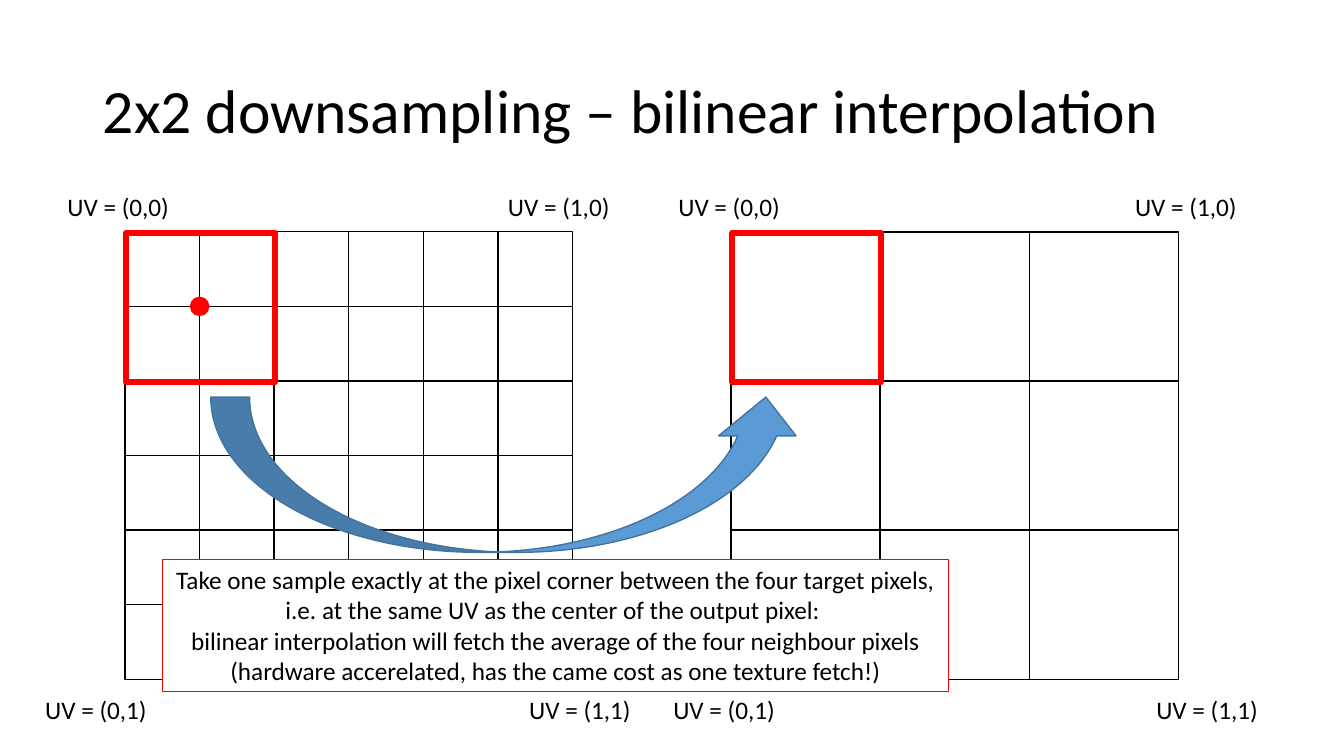
"""Build the slide on 2x2 downsampling by bilinear interpolation."""
from itertools import product

from pptx import Presentation
from pptx.dml.color import RGBColor
from pptx.enum.shapes import MSO_SHAPE as SHAPE
from pptx.enum.text import MSO_ANCHOR as ANCHOR, MSO_AUTO_SIZE as AUTO, PP_ALIGN as ALIGN
from pptx.oxml.ns import qn
from pptx.util import Inches, Pt

COLORS = {"black": "000000", "white": "FFFFFF", "red": "FF0000",
          "blue": "5B9BD5", "navy": "43739E"}
FONT = "Calibri"
CELL = 0.74
TOP = 2.3
INPUT_X, OUTPUT_X = 1.24, 7.25
LABEL_ROWS = (1.85, 6.84)
LABEL_COLUMNS = (((0.57, 4.94), (0.35, 5.15)),
                 ((6.63, 11.16), (6.58, 11.37)))
NOTE = ("Take one sample exactly at the pixel corner between the four target pixels, "
        "i.e. at the same UV as the center of the output pixel: ",
        "bilinear interpolation will fetch the average of the four neighbour pixels",
        "(hardware accerelated, has the came cost as one texture fetch!)")


def rgb(name):
    """Return the named colour."""
    return RGBColor.from_string(COLORS[name])


def box(*lengths):
    """Turn lengths in inches into slide units."""
    return [Inches(v) for v in lengths]


def write(s, *lines, size=18, color="black", align=ALIGN.LEFT,
          anchor=ANCHOR.TOP, wrap=True, spacing=None):
    """Write each line as a formatted paragraph in a shape."""
    tf = s.text_frame
    tf.word_wrap = wrap
    tf.vertical_anchor = anchor
    for i, line in enumerate(lines):
        p = tf.add_paragraph() if i else tf.paragraphs[0]
        p.alignment = align
        p.line_spacing = spacing
        r = p.add_run()
        r.text = line
        r.font.name, r.font.size = FONT, Pt(size)
        r.font.color.rgb = rgb(color)


def draw(shapes, kind, x, y, w, h, fill=None, line="black", weight=1):
    """Add a preset shape with its fill and outline."""
    s = shapes.add_shape(kind, *box(x, y, w, h))
    s.shadow.inherit = False
    if fill:
        s.fill.solid()
        s.fill.fore_color.rgb = rgb(fill)
    else:
        s.fill.background()
    s.line.color.rgb = rgb(line)
    s.line.width = Pt(weight)
    return s


def pixel_grid(shapes, x, size, cells):
    """Group square pixels placed by row and column."""
    group = shapes.add_group_shape()
    for row, col in cells:
        draw(group.shapes, SHAPE.RECTANGLE, x + col * size, TOP + row * size, size, size)


def uv_label(shapes, x, y, u, v):
    """Add the UV coordinate of a texture corner."""
    s = shapes.add_textbox(*box(x, y, 1.26, 0.4))
    write(s, f"UV = ({u},{v})", wrap=False)


def main():
    """Build and save the slide."""
    prs = Presentation()
    prs.slide_width, prs.slide_height = box(13.33, 7.5)
    slide = prs.slides.add_slide(prs.slide_layouts[5])
    shapes = slide.shapes

    title = shapes.title
    title.left, title.top, title.width, title.height = box(0.92, 0.4, 11.5, 1.45)
    write(title, "2x2 downsampling – bilinear interpolation", size=44,
          anchor=ANCHOR.MIDDLE, spacing=0.9)

    pixel_grid(shapes, INPUT_X, CELL, [*product(range(5), range(6)), (5, 0)])
    pixel_grid(shapes, OUTPUT_X, 2 * CELL, product(range(3), repeat=2))
    for x in (INPUT_X, OUTPUT_X):
        draw(shapes, SHAPE.RECTANGLE, x + 0.01, TOP + 0.01, 2 * CELL, 2 * CELL,
             line="red", weight=4.25)

    arrow = draw(shapes, SHAPE.CURVED_DOWN_ARROW, 2.09, 3.94, 5.89, 1.54,
                 fill="blue", line="navy")
    arrow._element.spPr.find(qn("a:xfrm")).set("flipV", "1")

    note = draw(shapes, SHAPE.RECTANGLE, 1.61, 5.55, 7.8, 1.31,
                fill="white", line="red", weight=0.75)
    write(note, *NOTE, align=ALIGN.CENTER)
    note.text_frame.auto_size = AUTO.SHAPE_TO_FIT_TEXT

    for columns in LABEL_COLUMNS:
        for v, u in product(range(2), repeat=2):
            uv_label(shapes, columns[v][u], LABEL_ROWS[v], u, v)

    dot = 0.18
    draw(shapes, SHAPE.OVAL, INPUT_X + CELL - dot / 2, TOP + CELL - dot / 2, dot, dot,
         fill="red", line="red")
    prs.save("out.pptx")


if __name__ == "__main__":
    main()
